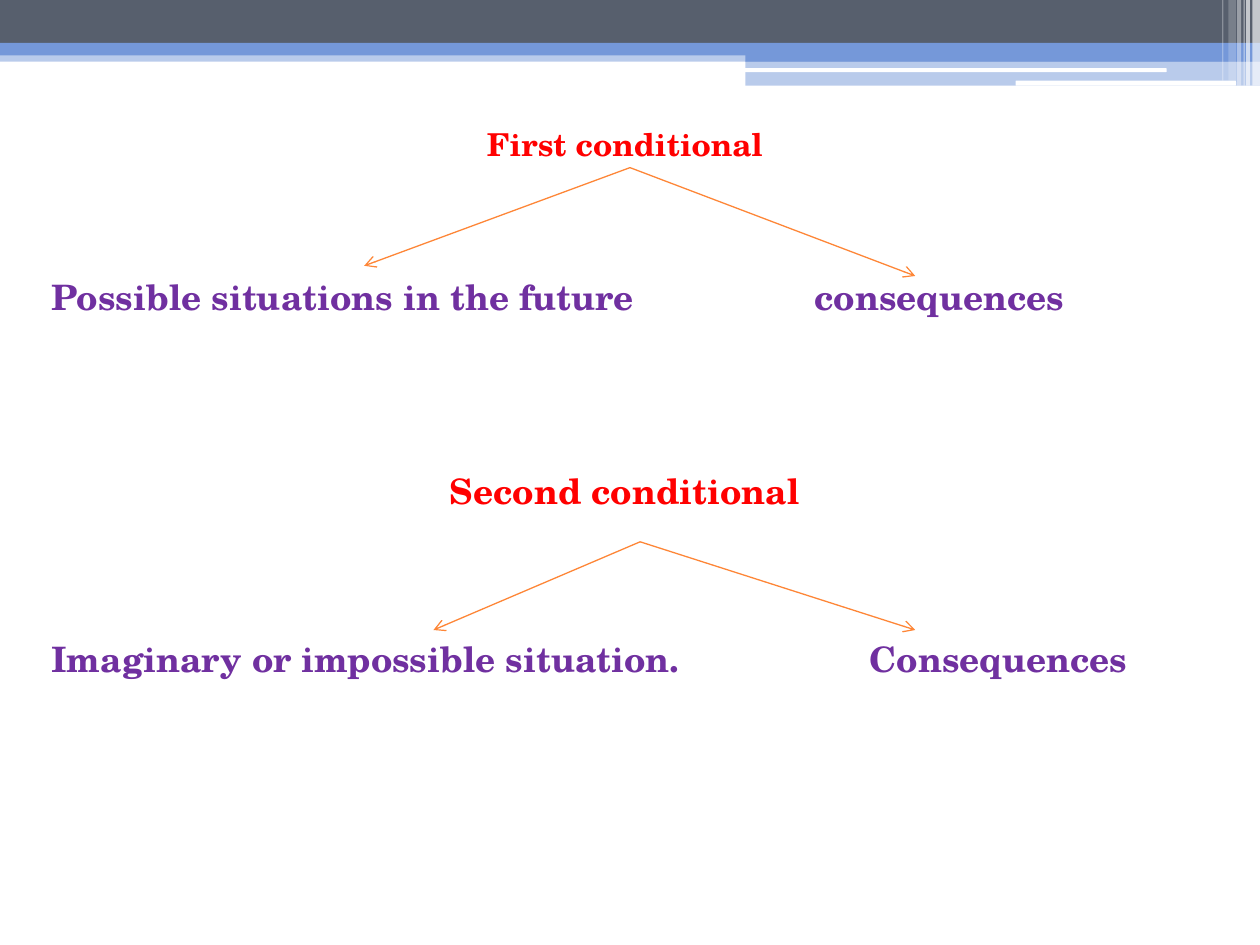
from lxml.etree import SubElement
from pptx import Presentation
from pptx.dml.color import RGBColor
from pptx.enum.shapes import MSO_CONNECTOR, MSO_SHAPE
from pptx.enum.text import MSO_AUTO_SIZE, PP_ALIGN
from pptx.oxml.ns import qn
from pptx.util import Pt

FONT = "TeX Gyre Schola"
SLATE, BLUE, WHITE = "575F6D", "7598D9", "FFFFFF"
RED, PURPLE, ORANGE = "FF0000", "7030A0", "FE8637"

# left, top, width, height, colour, opacity in percent
BANDS = [
    (0, 28.8, 720, 6.5, BLUE, 50),
    (0, 0, 720, 24.5, SLATE, 100),
    (0, 24.5, 720, 7.2, BLUE, 100),
    (426, 28, 294, 7.2, BLUE, 100),
    (426, 34.6, 294, 14.4, BLUE, 50),
]
HIGHLIGHTS = [
    (425.5, 39, 241.2, 2.2, WHITE, 100),
    (580.3, 46.1, 126, 2.9, WHITE, 100),
]
# left, width, height, opacity in percent
STRIPES = [
    (715.7, 4.3, 49, 65),
    (712.1, 2.2, 49, 65),
    (710.6, 0.7, 49, 60),
    (707, 2.2, 49, 40),
    (702, 4.3, 46.1, 20),
    (698.4, 0.7, 46.1, 30),
]

# text, size, colour, alignment, space before, tab stop
LINES = [
    ("First conditional", 18, RED, PP_ALIGN.CENTER, 0, None),
    ("Possible situations in the future\tconsequences",
     20, PURPLE, PP_ALIGN.LEFT, 64.8, 436),
    ("Second conditional", 20, RED, PP_ALIGN.CENTER, 86.4, None),
    ("Imaginary or impossible situation.\tConsequences",
     20, PURPLE, PP_ALIGN.LEFT, 72, 467.5),
]

# fork point, followed by the points its arrows reach
FORKS = [
    ((360, 95.8), [(523, 157.7), (208.1, 151.9)]),
    ((365.8, 309.6), [(523, 360), (247.7, 360)]),
]


def rgb(hex_colour):
    return RGBColor.from_string(hex_colour)


def add_bar(slide, left, top, width, height, colour, opacity,
            preset=MSO_SHAPE.RECTANGLE):
    bar = slide.shapes.add_shape(preset, Pt(left), Pt(top), Pt(width), Pt(height))
    bar.shadow.inherit = False
    bar.line.fill.background()
    bar.fill.solid()
    bar.fill.fore_color.rgb = rgb(colour)
    if opacity < 100:
        colour_node = bar._element.spPr.find(qn("a:solidFill"))[0]
        SubElement(colour_node, qn("a:alpha"), val=str(opacity * 1000))


def add_header(slide):
    for band in BANDS:
        add_bar(slide, *band)
    for highlight in HIGHLIGHTS:
        add_bar(slide, *highlight, preset=MSO_SHAPE.ROUNDED_RECTANGLE)
    for left, width, height, opacity in STRIPES:
        add_bar(slide, left, 0, width, height, WHITE, opacity)


def add_conditionals(slide):
    box = slide.shapes.add_textbox(Pt(22.3), Pt(67.7), Pt(669.6), Pt(351.4))
    frame = box.text_frame
    frame.word_wrap = True
    frame.auto_size = MSO_AUTO_SIZE.NONE
    for index, (text, size, colour, alignment, gap, tab) in enumerate(LINES):
        line = frame.add_paragraph() if index else frame.paragraphs[0]
        line.text = text
        line.alignment = alignment
        line.space_before = Pt(gap)
        if tab:
            tabs = SubElement(line._p.get_or_add_pPr(), qn("a:tabLst"))
            SubElement(tabs, qn("a:tab"), pos=str(Pt(tab)), algn="l")
        for run in line.runs:
            run.font.name = FONT
            run.font.size = Pt(size)
            run.font.bold = True
            run.font.color.rgb = rgb(colour)


def add_arrow(slide, start, end):
    arrow = slide.shapes.add_connector(
        MSO_CONNECTOR.STRAIGHT, *map(Pt, start + end))
    arrow.line.color.rgb = rgb(ORANGE)
    arrow.line.width = Pt(0.75)
    SubElement(arrow.line._get_or_add_ln(), qn("a:tailEnd"), type="arrow")
    SubElement(arrow._element.spPr, qn("a:effectLst"))


def main():
    deck = Presentation()
    deck.slide_width, deck.slide_height = Pt(720), Pt(540)
    slide = deck.slides.add_slide(deck.slide_layouts[6])
    add_header(slide)
    add_conditionals(slide)
    for fork, targets in FORKS:
        for target in targets:
            add_arrow(slide, fork, target)
    deck.save("out.pptx")


if __name__ == "__main__":
    main()
